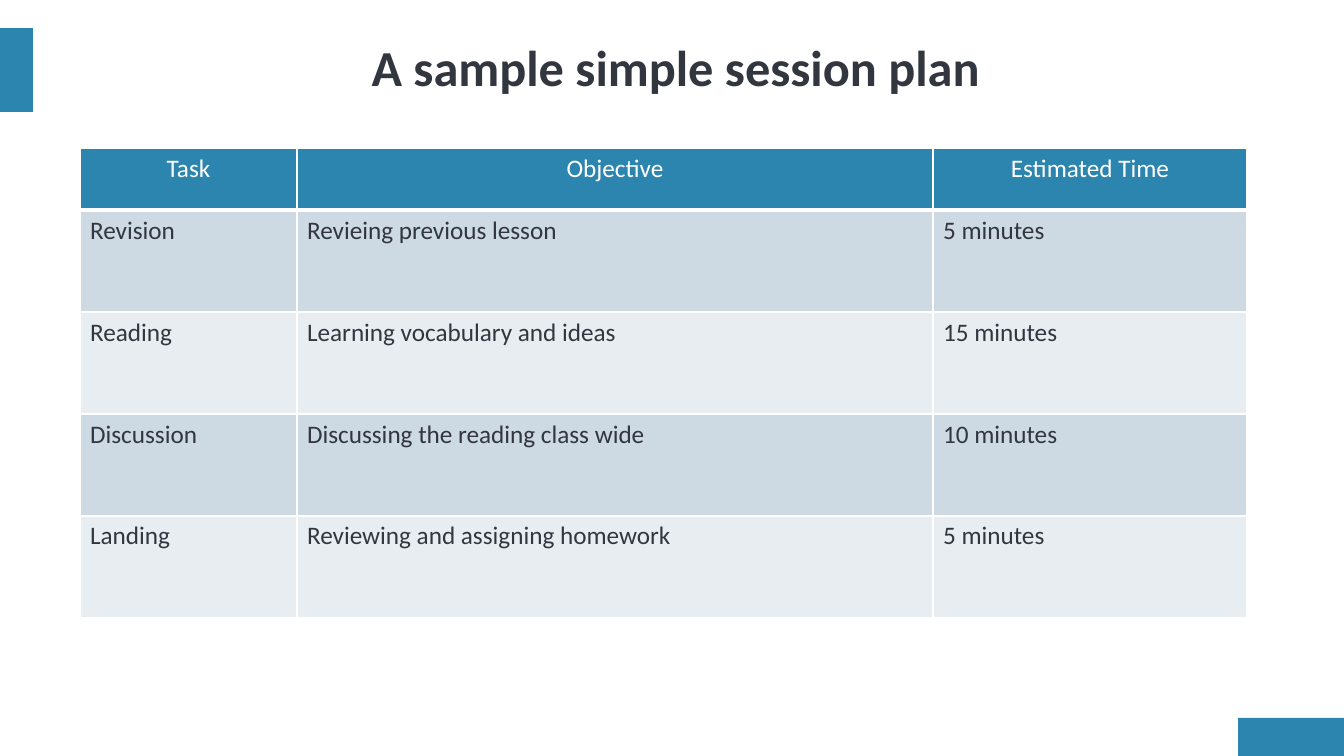
from lxml.etree import SubElement as Sub
from pptx import Presentation
from pptx.dml.color import RGBColor as Rgb
from pptx.enum.shapes import MSO_SHAPE as Shape
from pptx.enum.text import MSO_ANCHOR as Anchor, PP_ALIGN as Align
from pptx.oxml.ns import qn
from pptx.util import Pt

SCALE = 914400 / 100.8
BLUE, INK, WHITE = "2C85AE", "32363F", "FFFFFF"
BANDS = ["CDD9E3", "E8EDF2"]
HEAD = {"size": Pt(36), "name": "Calibri", "bold": True}
BODY = {"size": Pt(18), "name": "Calibri", "bold": False}
COLS = [217, 636, 314]
ROWS = [62] + [102] * 4
PLAN = [
    ("Task", "Objective", "Estimated Time"),
    ("Revision", "Revieing previous lesson", "5 minutes"),
    ("Reading", "Learning vocabulary and ideas", "15 minutes"),
    ("Discussion", "Discussing the reading class wide", "10 minutes"),
    ("Landing", "Reviewing and assigning homework", "5 minutes"),
]


def px(num):
    return round(num * SCALE)


def place(box):
    return [px(num) for num in box]


def paint(fill, color):
    fill.solid()
    fill.fore_color.rgb = Rgb.from_string(color)


def write(frame, text, style, color, align):
    para = frame.paragraphs[0]
    para.alignment = align
    run = para.add_run()
    run.text = text
    for key, value in style.items():
        setattr(run.font, key, value)
    paint(run.font.fill, color)
    return para


def add_bar(slide, box):
    bar = slide.shapes.add_shape(Shape.RECTANGLE, *place(box))
    bar.shadow.inherit = False
    paint(bar.fill, BLUE)
    bar.line.fill.background()


def add_title(slide, box, text):
    frame = slide.shapes.add_textbox(*place(box)).text_frame
    frame.word_wrap = True
    frame.vertical_anchor = Anchor.MIDDLE
    write(frame, text, HEAD, INK, Align.CENTER).line_spacing = 0.9


def edge(cell, base):
    props = cell._tc.get_or_add_tcPr()
    for side, width in {"L": 1, "R": 1, "T": 1, "B": base}.items():
        line = Sub(props, qn(f"a:ln{side}"), w=str(Pt(width)))
        Sub(Sub(line, qn("a:solidFill")), qn("a:srgbClr"), val=WHITE)


def add_plan(slide, left, top):
    box = place((left, top, sum(COLS), sum(ROWS)))
    table = slide.shapes.add_table(len(ROWS), len(COLS), *box).table
    table.horz_banding = False
    for col, width in zip(table.columns, COLS):
        col.width = px(width)
    for r, (row, height, texts) in enumerate(zip(table.rows, ROWS, PLAN)):
        row.height = px(height)
        if r == 0:
            fill, color, align, base = BLUE, WHITE, Align.CENTER, 3
        else:
            fill, color, align, base = BANDS[(r - 1) % 2], INK, Align.LEFT, 1
        for cell, text in zip(row.cells, texts):
            edge(cell, base)
            paint(cell.fill, fill)
            write(cell.text_frame, text, BODY, color, align)


def main():
    deck = Presentation()
    deck.slide_width, deck.slide_height = px(1344), px(756)
    slide = deck.slides.add_slide(deck.slide_layouts[6])
    add_bar(slide, (1238, 718, 106, 38))
    add_bar(slide, (0, 28, 33, 84))
    add_title(slide, (41, 28, 1270, 84), "A sample simple session plan")
    add_plan(slide, 80, 148)
    deck.save("out.pptx")


if __name__ == "__main__":
    main()
